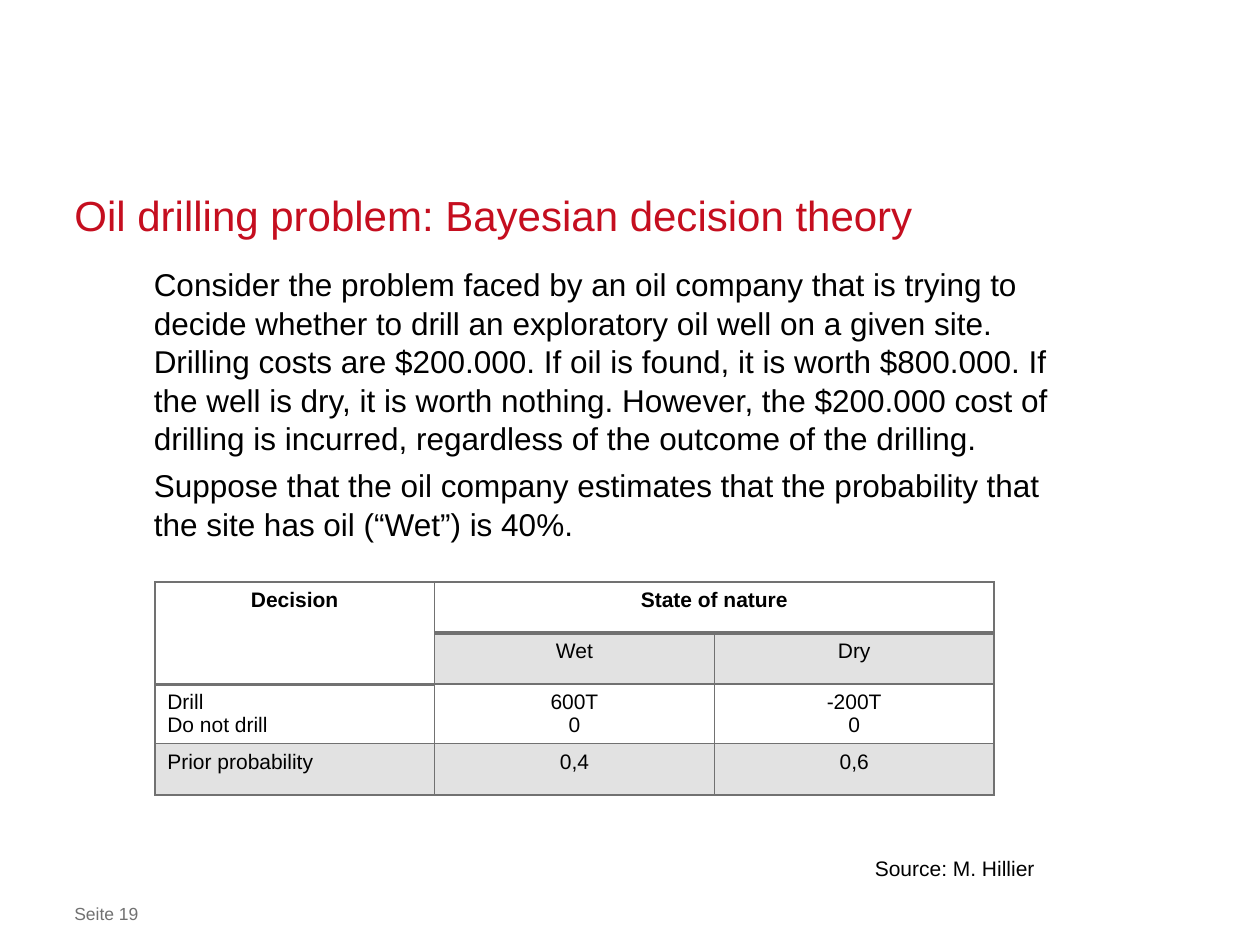
from lxml import etree
from pptx import Presentation
from pptx.dml.color import RGBColor
from pptx.enum.text import MSO_ANCHOR, MSO_AUTO_SIZE, PP_ALIGN
from pptx.oxml.ns import qn
from pptx.util import Cm, Pt

LEFT, MID, RIGHT = PP_ALIGN.LEFT, PP_ALIGN.CENTER, PP_ALIGN.RIGHT
TOP, BOTTOM = MSO_ANCHOR.TOP, MSO_ANCHOR.BOTTOM
FIXED = MSO_AUTO_SIZE.NONE
BLACK, RED, GREY, PALE, WHITE = "000000", "C50E1F", "717171", "E2E2E2", "FFFFFF"

TITLE = "Oil drilling problem: Bayesian decision theory"
BODY = [
    "Consider the problem faced by an oil company that is trying to decide "
    "whether to drill an exploratory oil well on a given site. Drilling costs "
    "are $200.000. If oil is found, it is worth $800.000. If the well is dry, "
    "it is worth nothing. However, the $200.000 cost of drilling is incurred, "
    "regardless of the outcome of the drilling.",
    "Suppose that the oil company estimates that the probability that the "
    "site has oil (“Wet”) is 40%.",
]
ROWS = [
    ["Decision", "State of nature", ""],
    ["", "Wet", "Dry"],
    ["Drill\nDo not drill", "600T\n0", "-200T\n0"],
    ["Prior probability", "0,4", "0,6"],
]
HEIGHTS = [1.03, 1.03, 1.19, 1.03]
SHADED = {(1, 1), (1, 2), (3, 0), (3, 1), (3, 2)}
THICK = {(0, 1, "B"), (0, 2, "B"), (1, 1, "T"), (1, 2, "T"),
         (0, 0, "B"), (1, 0, "B"), (2, 0, "T")}


def color(text):
    return RGBColor.from_string(text)


def apply(target, values):
    for name, value in values.items():
        setattr(target, name, value)


class Deck:
    font = "Arial"

    def __init__(self):
        self.file = Presentation()
        apply(self.file, {"slide_width": Cm(25.4), "slide_height": Cm(19.05)})
        self.slide = self.file.slides.add_slide(self.file.slide_layouts[1])

    def fill(self, frame, lines, size, tint=BLACK, bold=False, **form):
        frame.text = "\n".join(lines)
        for para in frame.paragraphs:
            apply(para, form)
            for run in para.runs:
                apply(run.font, {"name": self.font, "size": Pt(size), "bold": bold})
                run.font.color.rgb = color(tint)

    def place(self, shape, box, anchor=TOP, inset=0):
        apply(shape, dict(zip(("left", "top", "width", "height"), map(Cm, box))))
        sides = ("margin_left", "margin_right", "margin_top", "margin_bottom")
        apply(shape.text_frame, {
            "word_wrap": True, "auto_size": FIXED, "vertical_anchor": anchor,
            **dict(zip(sides, (Cm(inset), Cm(inset), Cm(inset / 2), Cm(inset / 2)))),
        })
        return shape.text_frame

    def title(self, text, box):
        frame = self.place(self.slide.shapes.title, box, BOTTOM)
        self.fill(frame, [text], 24, RED, alignment=LEFT, line_spacing=Pt(30))

    def body(self, lines, box):
        frame = self.place(self.slide.placeholders[1], box)
        self.fill(frame, lines, 18, alignment=LEFT,
                  line_spacing=Pt(22), space_before=Pt(5))
        for para in frame.paragraphs:
            props = para._p.get_or_add_pPr()
            props.set("marL", "0")
            props.set("indent", "0")
            etree.SubElement(props, qn("a:buNone"))

    def label(self, text, box, size, tint=BLACK, side=LEFT, inset=0):
        frame = self.place(self.slide.shapes.add_textbox(0, 0, 0, 0), box, inset=inset)
        self.fill(frame, [text], size, tint, alignment=side)

    def border(self, cell, side, width):
        line = etree.SubElement(cell._tc.get_or_add_tcPr(), qn("a:ln" + side),
                                w=str(Pt(width)))
        paint = etree.SubElement(line, qn("a:solidFill"))
        etree.SubElement(paint, qn("a:srgbClr"), val=GREY)

    def table(self, rows, left, top, wide):
        count = len(rows[0])
        grid = self.slide.shapes.add_table(
            len(rows), count, Cm(left), Cm(top),
            Cm(wide * count), Cm(sum(HEIGHTS))).table
        apply(grid, {"first_row": False, "horz_banding": False})
        for col in grid.columns:
            col.width = Cm(wide)
        for r, (row, high) in enumerate(zip(rows, HEIGHTS)):
            grid.rows[r].height = Cm(high)
            for c, text in enumerate(row):
                cell = grid.cell(r, c)
                side = LEFT if c == 0 and r > 1 else MID
                self.fill(cell.text_frame, text.split("\n"), 12,
                          bold=r == 0, alignment=side)
                for edge in "LRTB":
                    self.border(cell, edge, 2 if (r, c, edge) in THICK else 1)
                cell.fill.solid()
                cell.fill.fore_color.rgb = color(PALE if (r, c) in SHADED else WHITE)
        grid.cell(0, 0).merge(grid.cell(1, 0))
        grid.cell(0, 1).merge(grid.cell(0, 2))

    def save(self):
        self.file.save("out.pptx")


def main():
    deck = Deck()
    deck.body(BODY, (3.1, 5.33, 18.8, 11.3))
    deck.label("Seite 19", (1.5, 18.21, 18.39, 0.43), 10, GREY)
    deck.title(TITLE, (1.5, 3.84, 22.4, 0.99))
    deck.table(ROWS, 3.12, 11.73, 5.64)
    deck.label("Source: M. Hillier", (14.1, 17.12, 7.01, 0.76), 12,
               side=RIGHT, inset=0.25)
    deck.save()


if __name__ == "__main__":
    main()
